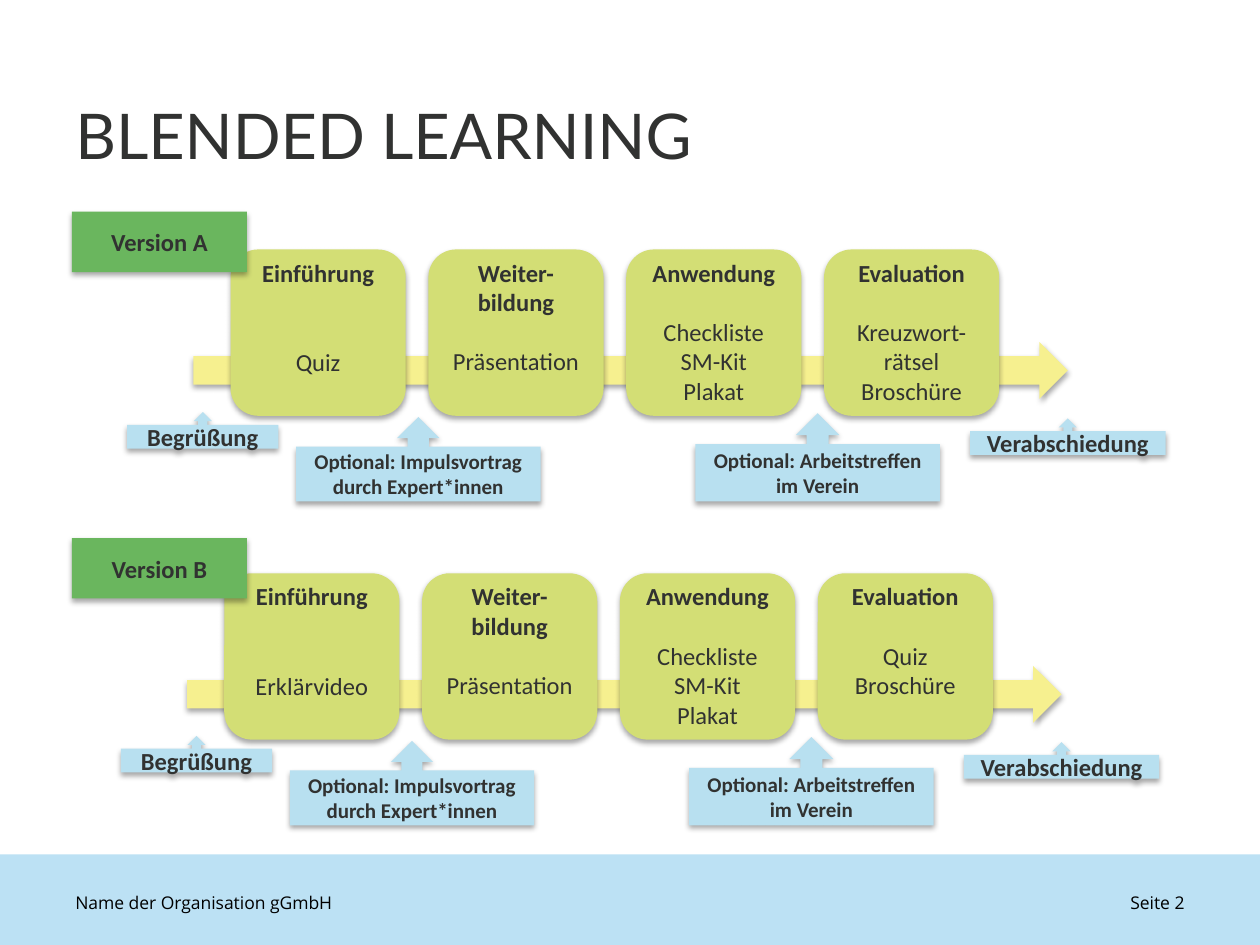
from lxml import etree
from pptx import Presentation
from pptx.dml.color import RGBColor
from pptx.enum.shapes import MSO_SHAPE
from pptx.enum.text import MSO_ANCHOR, PP_ALIGN
from pptx.oxml.ns import qn
from pptx.util import Inches, Pt

RECT, CARD = MSO_SHAPE.RECTANGLE, MSO_SHAPE.ROUNDED_RECTANGLE
ARROW, CALLOUT = MSO_SHAPE.RIGHT_ARROW, MSO_SHAPE.UP_ARROW_CALLOUT
LEFT, CENTER, RIGHT = PP_ALIGN.LEFT, PP_ALIGN.CENTER, PP_ALIGN.RIGHT
TOP, MIDDLE = MSO_ANCHOR.TOP, MSO_ANCHOR.MIDDLE

DARK = RGBColor(0x31, 0x32, 0x31)
BLACK = RGBColor(0x00, 0x00, 0x00)
SKY = RGBColor(0xBC, 0xE1, 0xF4)
BLUE = RGBColor(0xB8, 0xE0, 0xF0)
LIME = RGBColor(0xD3, 0xDE, 0x75)
GREEN = RGBColor(0x6A, 0xB6, 0x5E)
YELLOW = RGBColor(0xF6, 0xF0, 0x8F)

WIDTH, HEIGHT = Inches(10), Inches(7.5)
COL, ROW = WIDTH / 100, HEIGHT / 75
CARD_GAP = 1.8
LINE = 17.1

TRAINING = ("Weiter-bildung", 1, ["Präsentation"])
PRACTICE = ("Anwendung", 1, ["Checkliste", "SM-Kit", "Plakat"])
VERSIONS = [
    ("Version A", (5.7, 16.8, 13.9, 4.8), (18.3, 19.8, 61, 13.2), [
        ("Einführung", 2, ["Quiz"]), TRAINING, PRACTICE,
        ("Evaluation", 1, ["Kreuzwort-rätsel", "Broschüre"])]),
    ("Version B", (5.7, 42.7, 13.9, 4.8), (17.8, 45.5, 61, 13.2), [
        ("Einführung", 2, ["Erklärvideo"]), TRAINING, PRACTICE,
        ("Evaluation", 1, ["Quiz", "Broschüre"])]),
]
CALLOUTS = [
    ("Optional: Impulsvortrag durch Expert*innen", 12, (5.2, 13.3, 19.4, 6.7)),
    ("Optional: Arbeitstreffen im Verein", 12, (36.9, 13, 19.4, 7)),
    ("Verabschiedung", 14, (58.7, 13.4, 15.5, 2.9)),
    ("Begrüßung", 14, (-8.2, 12.9, 12, 2.9)),
]


def place(box):
    """Turn a box in columns and rows into slide lengths."""
    x, y, w, h = box
    return round(x * COL), round(y * ROW), round(w * COL), round(h * ROW)


def add_shadow(sp):
    """Give a shape a soft shadow straight below it."""
    effects = sp._element.spPr.find(qn("a:effectLst"))
    shadow = etree.SubElement(effects, qn("a:outerShdw"), blurRad="40000",
                              dist="23000", dir="5400000", rotWithShape="0")
    color = etree.SubElement(shadow, qn("a:srgbClr"), val="000000")
    etree.SubElement(color, qn("a:alpha"), val="35000")


def add_box(s, kind, box, fill, shadow=True):
    """Add a borderless filled shape."""
    sp = s.shapes.add_shape(kind, *place(box))
    sp.fill.solid()
    sp.fill.fore_color.rgb = fill
    sp.line.fill.background()
    sp.shadow.inherit = False
    if shadow:
        add_shadow(sp)
    return sp


def write(sp, lines, size, font="Calibri", color=DARK, align=CENTER,
          anchor=MIDDLE):
    """Write (text, bold, space before) lines into a shape."""
    tf = sp.text_frame
    tf.word_wrap = True
    tf.vertical_anchor = anchor
    for i, (text, bold, before) in enumerate(lines):
        p = tf.add_paragraph() if i else tf.paragraphs[0]
        p.alignment = align
        if before:
            p.space_before = Pt(before)
        r = p.add_run()
        r.text = text
        r.font.name, r.font.size, r.font.bold = font, Pt(size), bold
        r.font.color.rgb = color


def add_card(s, box, heading, blank_lines, items):
    """Add one learning step with its heading and materials."""
    sp = add_box(s, CARD, box, LIME)
    sp.text_frame.margin_top = sp.text_frame.margin_bottom = 0
    gaps = [blank_lines * LINE] + [0] * (len(items) - 1)
    body = [(item, False, gap) for item, gap in zip(items, gaps)]
    write(sp, [(heading, True, 0)] + body, 14, anchor=TOP)


def add_version(s, label, label_box, box, cards):
    """Add one process row: arrow, cards, callouts and label."""
    x, y, w, h = box
    add_box(s, ARROW, (x - 2.95, y + 7.35, 69.4, 4.5), YELLOW)
    card_w = (w - CARD_GAP * (len(cards) - 1)) / len(cards)
    for i, card in enumerate(cards):
        add_card(s, (x + i * (card_w + CARD_GAP), y, card_w, h), *card)
    for text, size, (dx, dy, cw, ch) in CALLOUTS:
        sp = add_box(s, CALLOUT, (x + dx, y + dy, cw, ch), BLUE)
        write(sp, [(text, True, 0)], size)
    write(add_box(s, RECT, label_box, GREEN), [(label, True, 0)], 14)


def add_title(s, box):
    """Add the slide title."""
    sp = s.shapes.add_textbox(*place(box))
    write(sp, [("BLENDED LEARNING", False, 0)], 36, "Lato", align=LEFT)


def add_footer(s, box):
    """Add the footer band with organisation and page number."""
    x, y, w, h = box
    add_box(s, RECT, box, SKY, shadow=False)
    for text, left, width, align in [
            ("Seite 2", x + 71.7, 23.3, RIGHT),
            ("Name der Organisation gGmbH", x + 5, 31.7, LEFT)]:
        sp = add_box(s, RECT, (left, y + 1.8, width, 4), SKY, shadow=False)
        write(sp, [(text, False, 0)], 10, "Open Sans", BLACK, align)


def main():
    """Build and save the slide."""
    prs = Presentation()
    prs.slide_width, prs.slide_height = WIDTH, HEIGHT
    s = prs.slides.add_slide(prs.slide_layouts[6])
    add_footer(s, (0, 67.8, 100, 7.2))
    add_title(s, (5, 4.4, 90, 12.5))
    for version in VERSIONS:
        add_version(s, *version)
    prs.save("out.pptx")


if __name__ == "__main__":
    main()
